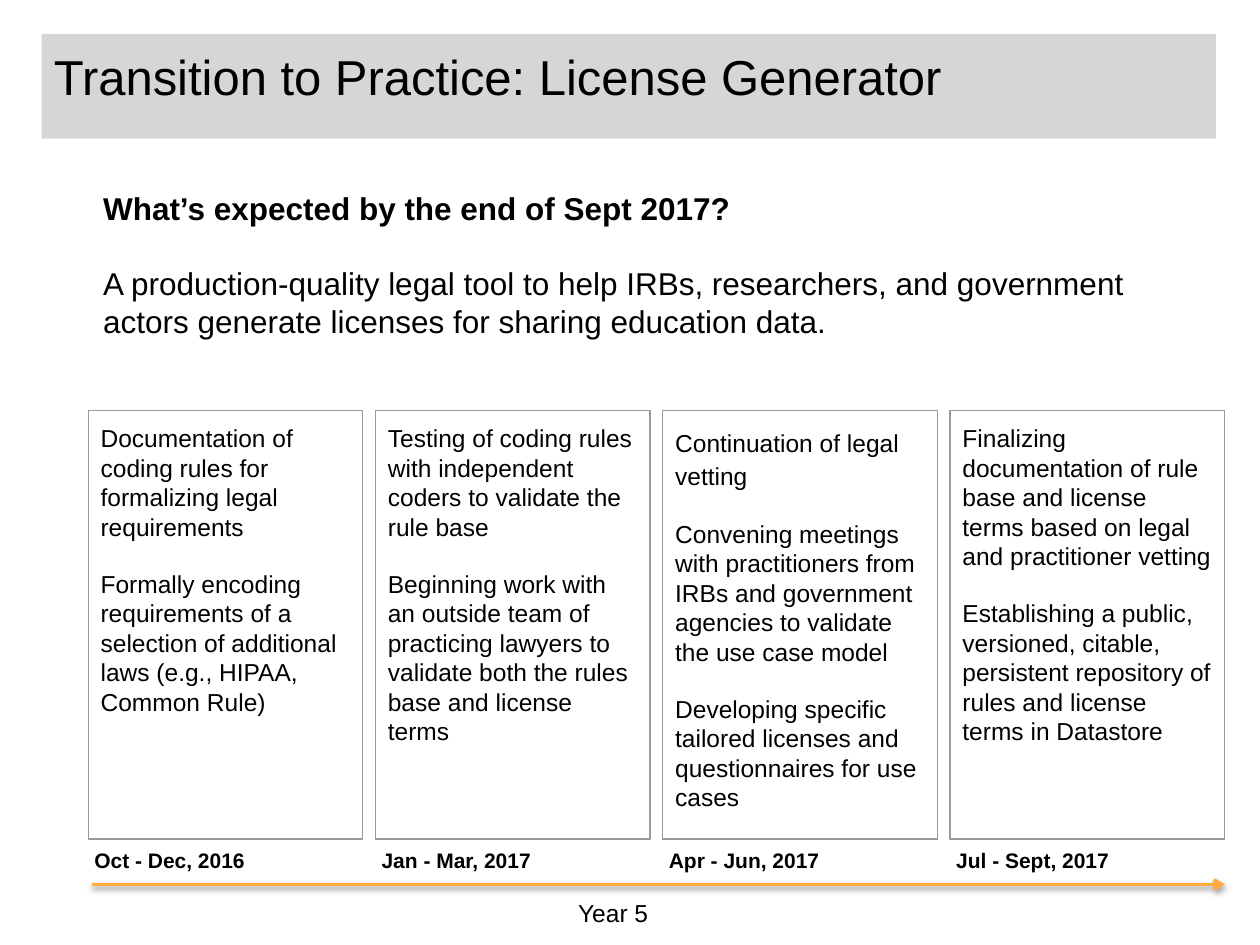
from lxml import etree
from pptx import Presentation
from pptx.dml.color import RGBColor
from pptx.enum.shapes import MSO_CONNECTOR, MSO_SHAPE
from pptx.enum.text import MSO_ANCHOR, PP_ALIGN
from pptx.oxml import parse_xml
from pptx.oxml.ns import nsdecls, qn
from pptx.util import Inches, Pt

RECT = MSO_SHAPE.RECTANGLE
STRAIGHT = MSO_CONNECTOR.STRAIGHT
TOP = MSO_ANCHOR.TOP
LEFT = PP_ALIGN.LEFT

COLORS = {"text": "000000", "band": "D6D6D6", "edge": "999999", "time": "FFAB40"}

# Each quarter: label, first-line spacing, tasks
QUARTERS = [
    ("Oct - Dec, 2016", None, [
        "Documentation of coding rules for formalizing legal requirements",
        "Formally encoding requirements of a selection of additional laws "
        "(e.g., HIPAA, Common Rule)"]),
    ("Jan - Mar, 2017", None, [
        "Testing of coding rules with independent coders to validate the rule base",
        "Beginning work with an outside team of practicing lawyers to validate "
        "both the rules base and license terms"]),
    ("Apr - Jun, 2017", 1.15, [
        "Continuation of legal vetting",
        "Convening meetings with practitioners from IRBs and government agencies "
        "to validate the use case model",
        "Developing specific tailored licenses and questionnaires for use cases"]),
    ("Jul - Sept, 2017", None, [
        "Finalizing documentation of rule base and license terms based on legal "
        "and practitioner vetting",
        "Establishing a public, versioned, citable, persistent repository of "
        "rules and license terms in Datastore"]),
]


def rgb(name):
    return RGBColor.from_string(COLORS[name])


def write(para, text, size=14, bold=False, after=0, lines=None, font="Arial"):
    """Put formatted text in a paragraph."""
    para.alignment = LEFT
    para.space_after = Pt(after)
    if lines:
        para.line_spacing = lines
    run = para.add_run()
    run.text = text
    run.font.name = font
    run.font.size = Pt(size)
    run.font.bold = bold
    run.font.color.rgb = rgb("text")


class Deck:
    """Holds the style and the current slide."""

    def __init__(self, inset=0.1):
        self.prs = Presentation()
        self.prs.slide_width = Inches(10)
        self.prs.slide_height = Inches(7.5)
        self.slide = self.prs.slides.add_slide(self.prs.slide_layouts[6])
        self.inset = inset

    def fill_text(self, shape, paras, pad):
        frame = shape.text_frame
        frame.word_wrap = True
        frame.vertical_anchor = TOP
        frame.margin_left = frame.margin_right = Inches(self.inset)
        frame.margin_top = frame.margin_bottom = Inches(pad)
        for i, (text, style) in enumerate(paras):
            para = frame.add_paragraph() if i else frame.paragraphs[0]
            write(para, text, **style)

    def label(self, x, y, w, h, paras, pad=0.1):
        box = self.slide.shapes.add_textbox(*map(Inches, (x, y, w, h)))
        self.fill_text(box, paras, pad)

    def panel(self, x, y, w, h, paras, fill=None, edge=None):
        box = self.slide.shapes.add_shape(RECT, *map(Inches, (x, y, w, h)))
        box.shadow.inherit = False
        if fill:
            box.fill.solid()
            box.fill.fore_color.rgb = rgb(fill)
        else:
            box.fill.background()
        if edge:
            box.line.color.rgb = rgb(edge)
            box.line.width = Pt(0.75)
        else:
            box.line.fill.background()
        self.fill_text(box, paras, 0.1)

    def arrow(self, x, y, end, color, width):
        line = self.slide.shapes.add_connector(
            STRAIGHT, Inches(x), Inches(y), Inches(end), Inches(y))
        line.line.color.rgb = rgb(color)
        line.line.width = Pt(width)
        props = line._element.spPr
        etree.SubElement(props.find(qn("a:ln")), qn("a:tailEnd"), type="arrow")
        # Soft shadow straight below the line
        props.append(parse_xml(
            f'<a:effectLst {nsdecls("a")}><a:outerShdw blurRad="{Pt(3.1)}" '
            f'dist="{Pt(1.6)}" dir="5400000" rotWithShape="0">'
            '<a:srgbClr val="000000"><a:alpha val="38000"/></a:srgbClr>'
            '</a:outerShdw></a:effectLst>'))


def main():
    deck = Deck()

    # Title band
    deck.panel(0.33, 0.27, 9.32, 0.83,
               [("Transition to Practice: License Generator", {"size": 28})],
               fill="band")

    # Goal
    deck.label(0.72, 1.4, 8.57, 1.27, [
        ("What’s expected by the end of Sept 2017?",
         {"size": 18, "bold": True, "after": 21.5}),
        ("A production-quality legal tool to help IRBs, researchers, and "
         "government actors generate licenses for sharing education data.",
         {"size": 18})])

    # Quarters in equal columns
    left, step = 0.7, 2.28
    for i, (date, lines, tasks) in enumerate(QUARTERS):
        x = left + i * step
        paras = [(task, {"after": 16, "lines": None if j else lines})
                 for j, task in enumerate(tasks)]
        deck.panel(x, 3.26, 2.18, 3.4, paras, edge="edge")
        deck.label(x - 0.05, 6.63, step, 0.28, [(date, {"size": 12, "bold": True})])

    # Timeline
    deck.arrow(0.73, 7.02, 9.72, "time", 2)
    deck.label(4.49, 7.08, 0.93, 0.34, [("Year 5", {})], pad=0.05)

    deck.prs.save("out.pptx")


if __name__ == "__main__":
    main()
